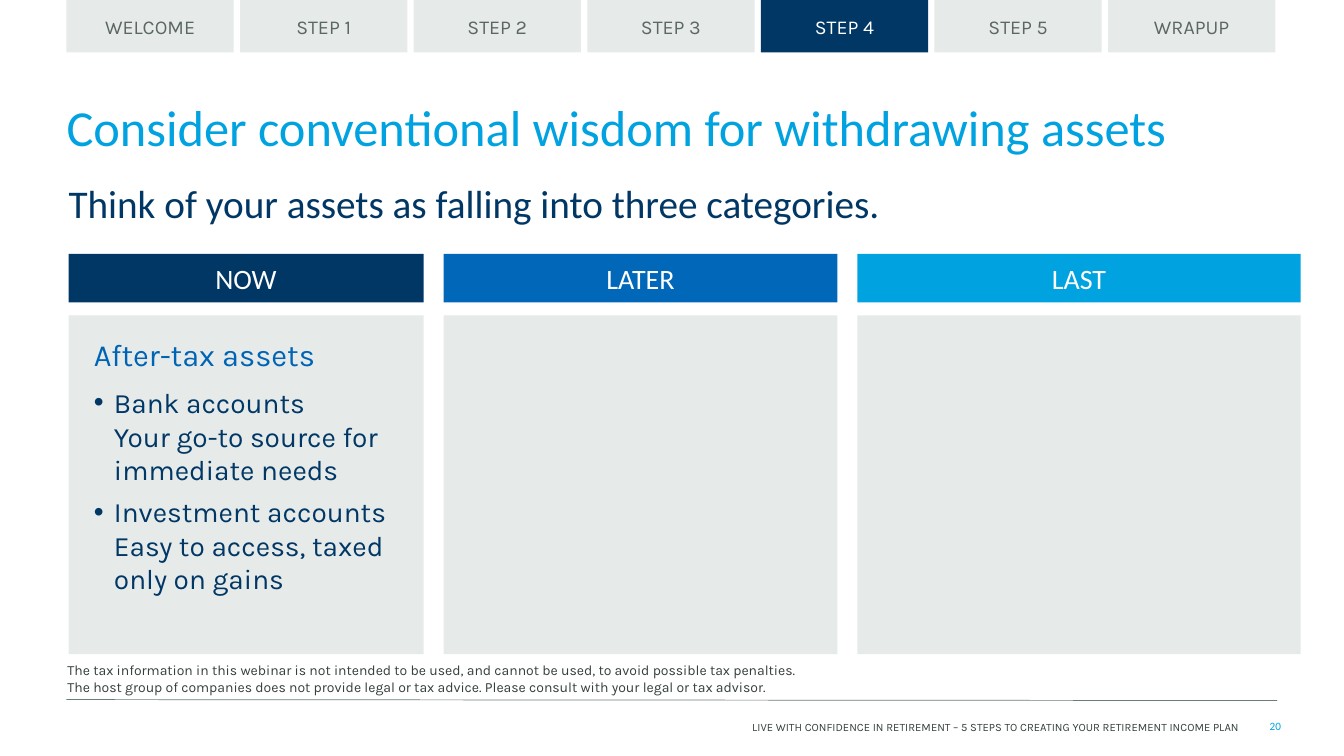
"""Build the Step 4 slide on withdrawing assets in three categories."""
from lxml import etree
from pptx import Presentation
from pptx.dml.color import RGBColor
from pptx.enum.shapes import MSO_CONNECTOR, MSO_SHAPE
from pptx.enum.text import MSO_ANCHOR, PP_ALIGN
from pptx.oxml.ns import qn
from pptx.util import Pt

RECTANGLE = MSO_SHAPE.RECTANGLE
STRAIGHT = MSO_CONNECTOR.STRAIGHT
TOP, MIDDLE, BOTTOM = MSO_ANCHOR.TOP, MSO_ANCHOR.MIDDLE, MSO_ANCHOR.BOTTOM
LEFT, CENTER, RIGHT = PP_ALIGN.LEFT, PP_ALIGN.CENTER, PP_ALIGN.RIGHT
NAVY = RGBColor(0x00, 0x37, 0x65)
BLUE = RGBColor(0x00, 0x67, 0xB9)
HEADING_BLUE = RGBColor(0x00, 0x64, 0xB5)
SKY = RGBColor(0x00, 0xA3, 0xE0)
PALE_GRAY = RGBColor(0xE6, 0xEA, 0xE9)
TAB_GRAY = RGBColor(0x5B, 0x67, 0x64)
RULE_GRAY = RGBColor(0x6A, 0x7E, 0x79)
DARK_GRAY = RGBColor(0x35, 0x3F, 0x3D)
WHITE = RGBColor(0xFF, 0xFF, 0xFF)


def write(shape, text, font, size, color, align=LEFT, anchor=TOP):
    """Fill a shape with text in one style and no margins."""
    frame = shape.text_frame
    frame.word_wrap = True
    frame.vertical_anchor = anchor
    frame.margin_left = frame.margin_top = frame.margin_right = frame.margin_bottom = 0
    frame.text = text
    for paragraph in frame.paragraphs:
        paragraph.alignment = align
        for run in paragraph.runs:
            run.font.name = font
            run.font.size = Pt(size)
            run.font.color.rgb = color
    return frame.paragraphs


def add_block(left, top, width, height, color):
    """Add a plain filled rectangle."""
    block = slide.shapes.add_shape(RECTANGLE, Pt(left), Pt(top), Pt(width), Pt(height))
    block.shadow.inherit = False
    block.fill.solid()
    block.fill.fore_color.rgb = color
    block.line.fill.background()
    return block


presentation = Presentation()
presentation.slide_width = Pt(960)
presentation.slide_height = Pt(540)
slide = presentation.slides.add_slide(presentation.slide_layouts[6])

rule = slide.shapes.add_connector(STRAIGHT, Pt(47.5), Pt(499.7), Pt(912.2), Pt(500.4))
rule.line.color.rgb = RULE_GRAY
rule.line.width = Pt(0.5)
etree.SubElement(rule.element.spPr, qn("a:effectLst"))

tabs = ["WELCOME", "STEP 1", "STEP 2", "STEP 3", "STEP 4", "STEP 5", "WRAPUP"]
for index, label in enumerate(tabs):
    current = label == "STEP 4"
    tab = add_block(47.5 + 124 * index, 0, 119.5, 37.4, NAVY if current else PALE_GRAY)
    write(tab, label, "Karla", 14, WHITE if current else TAB_GRAY, CENTER, MIDDLE)

left = 49
for label, width, color in [("NOW", 253.6, NAVY), ("LATER", 281.4, BLUE), ("LAST", 316.6, SKY)]:
    header = add_block(left, 181.4, width, 34.6, color)
    write(header, label, "Calibri", 20, WHITE, CENTER, MIDDLE)
    add_block(left, 225.3, width, 241.9, PALE_GRAY)
    left += width + 14.2

title = slide.shapes.add_textbox(Pt(47.5), Pt(82), Pt(863.3), Pt(38.2))
title_text = "Consider conventional wisdom for withdrawing assets"
write(title, title_text, "Calibri", 36, SKY)[0].line_spacing = Pt(30)

subtitle = slide.shapes.add_textbox(Pt(49), Pt(128.2), Pt(863.3), Pt(38.2))
write(subtitle, "Think of your assets as falling into three categories.", "Calibri", 28, NAVY)

assets = slide.shapes.add_textbox(Pt(67), Pt(236.2), Pt(243.4), Pt(208.8))
assets_text = (
    "After-tax assets\n"
    "Bank accounts\vYour go-to source for immediate needs\n"
    "Investment accounts\vEasy to access, taxed\vonly on gains"
)
heading, *bullets = write(assets, assets_text, "Karla", 20, NAVY)
heading.line_spacing = 1.14
heading.space_after = Pt(6)
heading.runs[0].font.size = Pt(22)
heading.runs[0].font.color.rgb = HEADING_BLUE
for paragraph in bullets:
    properties = paragraph._p.get_or_add_pPr()
    properties.set("marL", str(Pt(14.4)))
    properties.set("indent", str(Pt(-14.4)))
    etree.SubElement(properties, qn("a:buFont"), typeface="Arial")
    etree.SubElement(properties, qn("a:buChar"), char="•")
    paragraph.space_before = Pt(3)
    paragraph.space_after = Pt(3)

disclaimer = slide.shapes.add_textbox(Pt(48.2), Pt(472.3), Pt(863.3), Pt(28))
disclaimer_text = (
    "The tax information in this webinar is not intended to be used, "
    "and cannot be used, to avoid possible tax penalties.\v"
    "The host group of companies does not provide legal or tax advice. "
    "Please consult with your legal or tax advisor."
)
write(disclaimer, disclaimer_text, "Karla", 10, DARK_GRAY)

footer = slide.shapes.add_textbox(Pt(426.2), Pt(507.6), Pt(459.4), Pt(16.6))
footer_text = "LIVE WITH CONFIDENCE IN RETIREMENT – 5 STEPS TO CREATING YOUR RETIREMENT INCOME PLAN"
write(footer, footer_text, "Karla", 8, DARK_GRAY, RIGHT, BOTTOM)

page_number = slide.shapes.add_textbox(Pt(892.8), Pt(511.9), Pt(22.3), Pt(11.5))
write(page_number, "20", "Calibri", 8, SKY, RIGHT, BOTTOM)

presentation.save("out.pptx")
